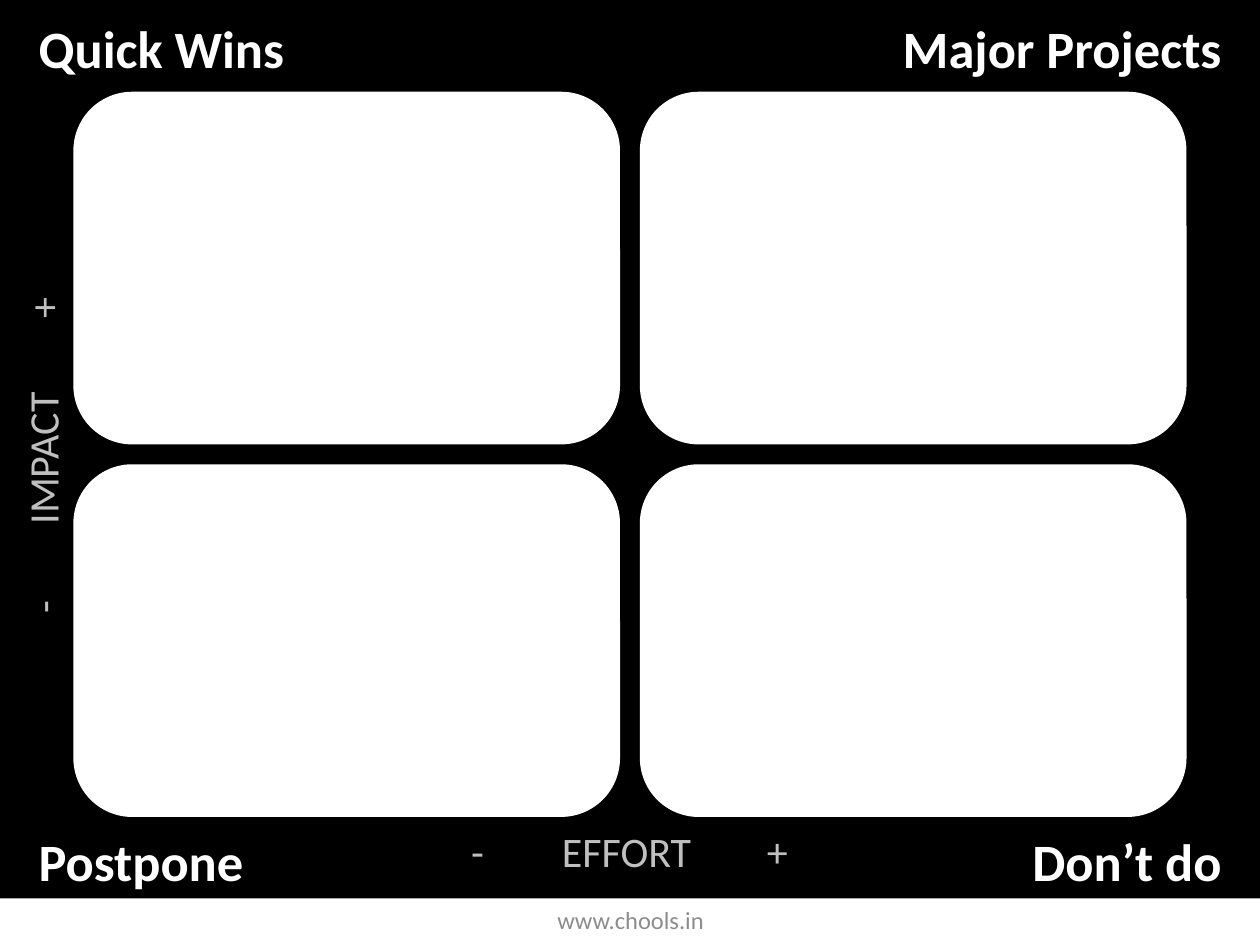
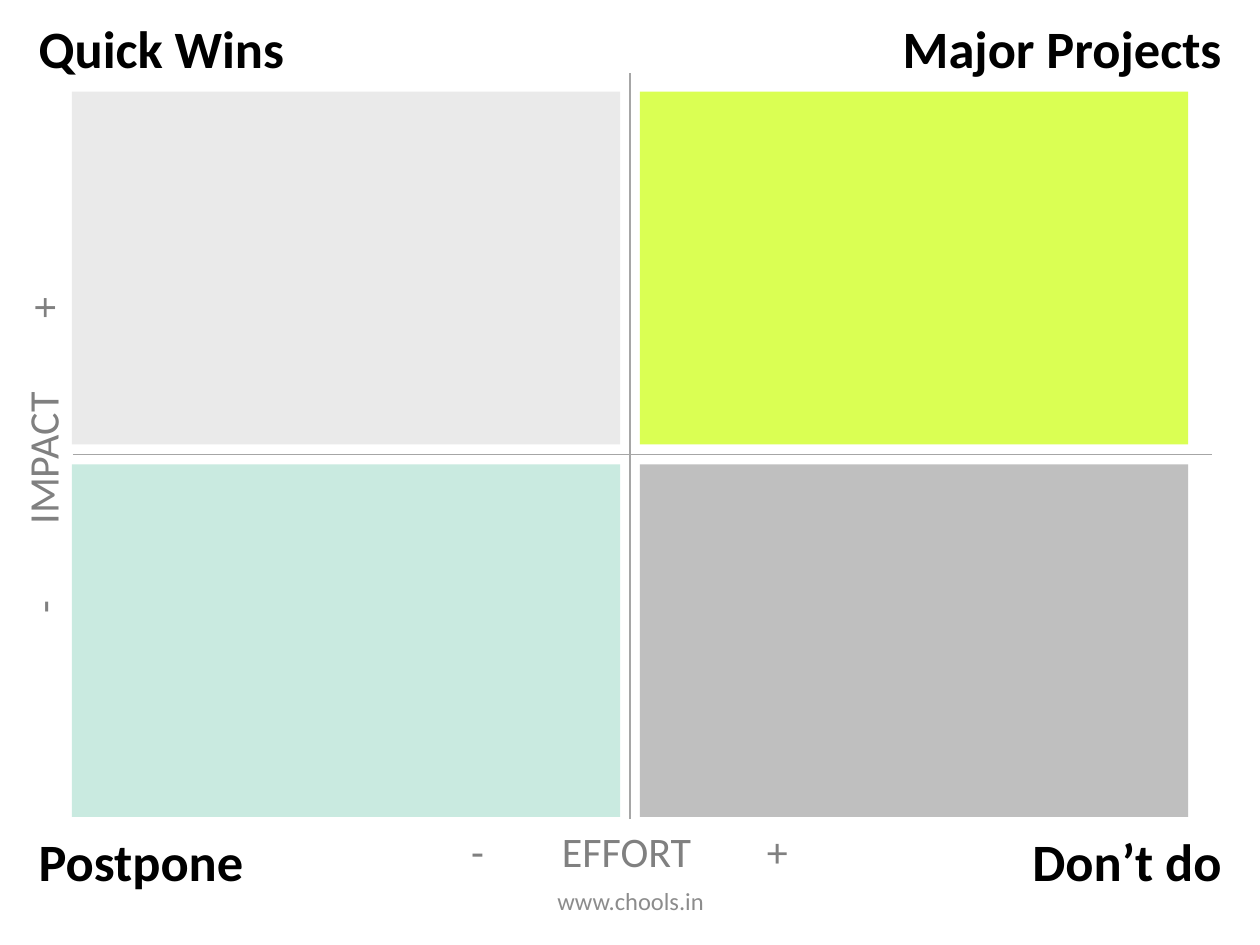
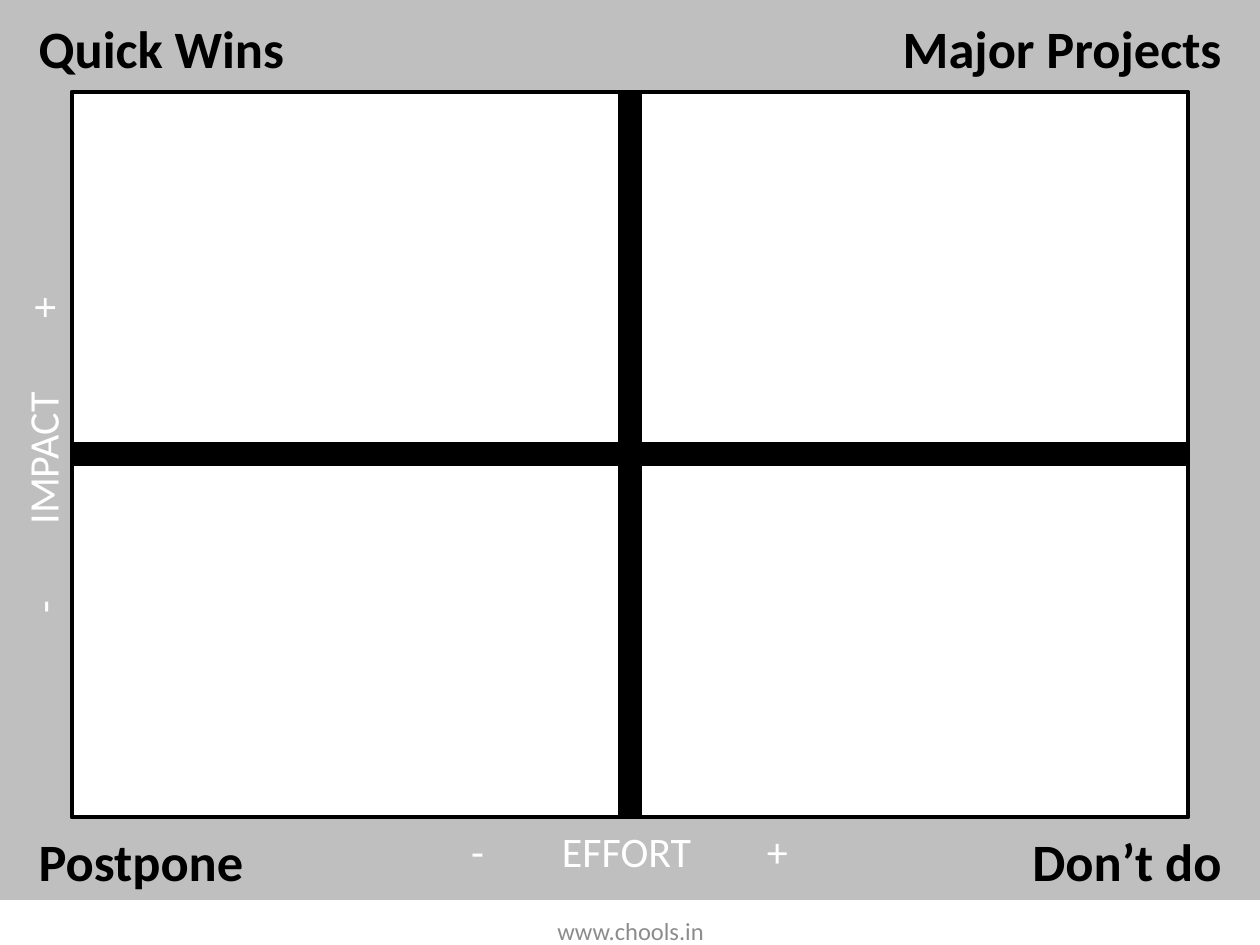
from dataclasses import dataclass

from lxml.etree import SubElement
from pptx import Presentation
from pptx.dml.color import RGBColor as RGB
from pptx.enum.shapes import MSO_CONNECTOR as LINE, MSO_SHAPE as SHAPE
from pptx.enum.text import MSO_ANCHOR as ANCHOR, MSO_AUTO_SIZE as FIT, PP_ALIGN as ALIGN
from pptx.oxml.ns import qn
from pptx.util import Cm, Pt


@dataclass(frozen=True)
class Theme:
    font: str = "Calibri"
    label_size: int = 30
    axis_size: int = 24
    footer_size: int = 14
    black: str = "000000"
    white: str = "FFFFFF"
    silver: str = "BFBFBF"
    pale: str = "EAEAEA"
    lime: str = "DAFF53"
    mint: str = "C9EAE0"
    rule: str = "A6A6A6"
    mid_gray: str = "808080"
    footer: str = "8C8C8C"


T = Theme()

# Quadrant grid, in cm, centred across the slide
MIDDLE, TOP, ROW_H, GAP = 12.7, 1.85, 7.11, 0.4
BAND_H = 18.11

# Corner labels: text, left, top, width, alignment
LABELS = (
    ("Quick Wins", 0.53, 0.2, 5.51, ALIGN.LEFT),
    ("Major Projects", 17.87, 0.2, 7.01, ALIGN.RIGHT),
    ("Postpone", 0.53, 16.59, 4.7, ALIGN.LEFT),
    ("Don’t do", 20.54, 16.59, 4.34, ALIGN.RIGHT),
)
# Axis labels: text, left, top, rotation
AXES = (("EFFORT", 9.25, 16.51, 0), ("IMPACT", -2.61, 8.53, 270))
AXIS_W, AXIS_TABS = 6.91, (("ctr", 3.13), ("r", 6.38))

# Cell colours run left to right, top row first
VARIANTS = (
    dict(band=T.black, cells=[T.white] * 4, cell_w=11.02, rounded=True,
         label=T.white, axis=T.silver, footer_y=18.03),
    dict(cells=[T.pale, T.lime, T.mint, T.silver], cell_w=11.05, cross=True,
         label=T.black, axis=T.mid_gray, footer_y=17.65),
    dict(band=T.silver, band_line=T.silver, frame=T.black, cells=[T.white] * 4,
         cell_w=11.05, cell_line=T.black, label=T.black, axis=T.white, footer_y=18.26),
)


def add_block(s, kind, box, fill, line=None, line_w=2):
    sp = s.shapes.add_shape(kind, *map(Cm, box))
    sp.shadow.inherit = False
    sp.fill.solid()
    sp.fill.fore_color.rgb = RGB.from_string(fill)
    if line:
        sp.line.color.rgb = RGB.from_string(line)
        sp.line.width = Pt(line_w)
    else:
        sp.line.fill.background()
    return sp


def add_text(s, text, box, size, color, align, bold=False, tabs=()):
    """Add a one-line text box; tabs are (alignment, position in cm) pairs."""
    sp = s.shapes.add_textbox(*map(Cm, box))
    tf = sp.text_frame
    p = tf.paragraphs[0]
    p.text = text
    p.alignment = align
    if tabs:
        tab_list = SubElement(p._p.get_or_add_pPr(), qn("a:tabLst"))
        for kind, pos in tabs:
            SubElement(tab_list, qn("a:tab"), pos=str(Cm(pos)), algn=kind)
    p.font.name = T.font
    p.font.size = Pt(size)
    p.font.bold = bold
    p.font.color.rgb = RGB.from_string(color)
    return sp


prs = Presentation()
prs.slide_width, prs.slide_height = Cm(25.4), Cm(19.05)

for v in VARIANTS:
    s = prs.slides.add_slide(prs.slide_layouts[6])
    cell_w = v["cell_w"]
    left = MIDDLE - GAP / 2 - cell_w

    if "band" in v:
        add_block(s, SHAPE.RECTANGLE, (0, 0, 25.4, BAND_H), v["band"], v.get("band_line"))
    if "frame" in v:
        frame = (left, TOP, 2 * cell_w + GAP, 2 * ROW_H + GAP)
        add_block(s, SHAPE.RECTANGLE, frame, v["frame"], v["frame"])

    for i, fill in enumerate(v["cells"]):
        row, col = divmod(i, 2)
        box = (left + col * (cell_w + GAP), TOP + row * (ROW_H + GAP), cell_w, ROW_H)
        cell = add_block(s, SHAPE.ROUNDED_RECTANGLE, box, fill, v.get("cell_line"), 2.25)
        if not v.get("rounded"):
            cell.adjustments[0] = 0

    if v.get("cross"):
        center_y = TOP + ROW_H + GAP / 2
        for ends in ((1.47, center_y, 24.43, center_y), (MIDDLE, 16.51, MIDDLE, 1.47)):
            rule = s.shapes.add_connector(LINE.STRAIGHT, *map(Cm, ends))
            rule.line.color.rgb = RGB.from_string(T.rule)
            rule.line.width = Pt(0.75)
            SubElement(rule._element.spPr, qn("a:effectLst"))

    for name, x, y, rotation in AXES:
        sp = add_text(s, f"-\t{name}\t+", (x, y, AXIS_W, 1.27), T.axis_size,
                      v["axis"], ALIGN.LEFT, tabs=AXIS_TABS)
        sp.rotation = rotation
        sp.text_frame.word_wrap = True
        sp.text_frame.margin_right = 0

    for text, x, y, w, align in LABELS:
        sp = add_text(s, text, (x, y, w, 1.55), T.label_size, v["label"], align, bold=True)
        sp.text_frame.word_wrap = False
        sp.text_frame.auto_size = FIT.SHAPE_TO_FIT_TEXT

    sp = add_text(s, "www.chools.in", (8.69, v["footer_y"], 8.05, 1.02),
                  T.footer_size, T.footer, ALIGN.CENTER)
    sp.text_frame.word_wrap = True
    sp.text_frame.vertical_anchor = ANCHOR.MIDDLE

prs.save("out.pptx")
